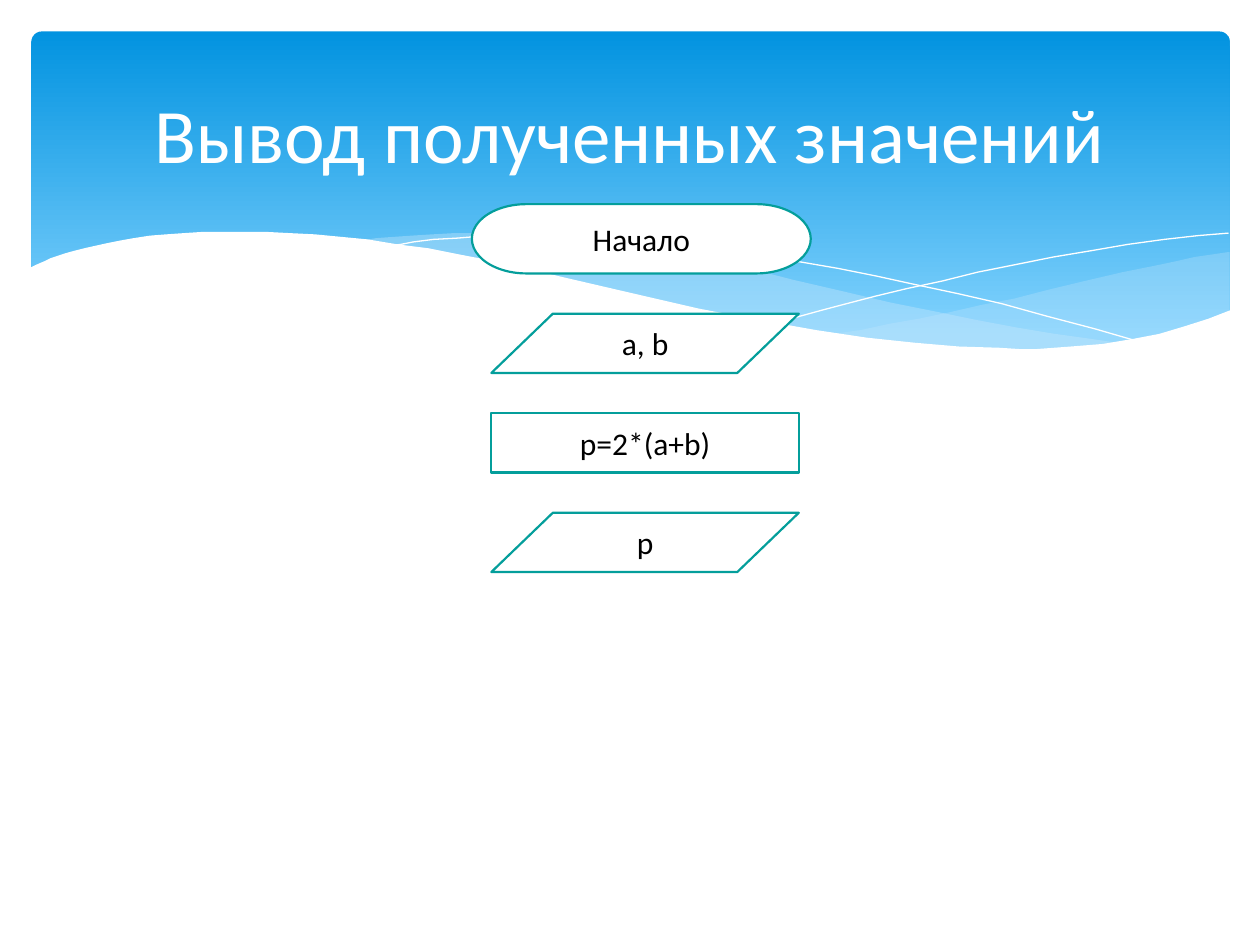
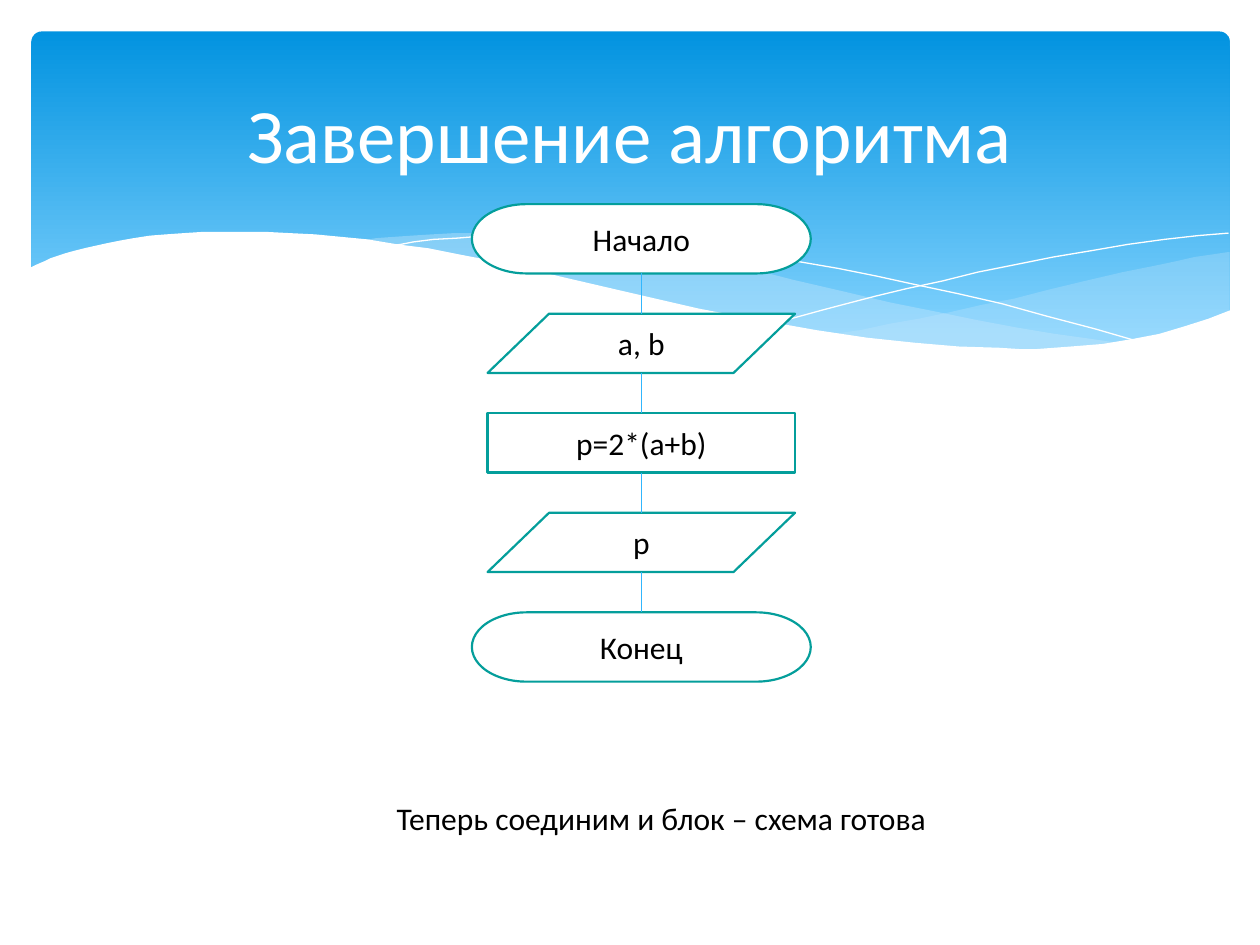
from lxml import etree
from pptx import Presentation
from pptx.dml.color import RGBColor
from pptx.enum.shapes import MSO_CONNECTOR, MSO_SHAPE
from pptx.enum.text import MSO_ANCHOR, PP_ALIGN
from pptx.oxml.ns import qn
from pptx.util import Inches, Pt

TERMINATOR = MSO_SHAPE.FLOWCHART_TERMINATOR
DATA = MSO_SHAPE.FLOWCHART_DATA
PROCESS = MSO_SHAPE.FLOWCHART_PROCESS
ROUNDED = MSO_SHAPE.ROUNDED_RECTANGLE
STRAIGHT = MSO_CONNECTOR.STRAIGHT
CENTER, LEFT = PP_ALIGN.CENTER, PP_ALIGN.LEFT
MIDDLE, TOP = MSO_ANCHOR.MIDDLE, MSO_ANCHOR.TOP

# Content
STEPS = [(TERMINATOR, "Начало"), (DATA, "a, b"), (PROCESS, "p=2*(a+b)"), (DATA, "p")]
SLIDES = [
    {"title": "Вывод полученных значений", "steps": STEPS,
     "step_shift": 0.03, "joined": False, "note": None},
    {"title": "Завершение алгоритма", "steps": STEPS + [(TERMINATOR, "Конец")],
     "step_shift": 0, "joined": True, "note": "Теперь соединим и блок – схема готова"},
]

# Shared style
FONT = "Calibri"
WHITE, BLACK = "FFFFFF", "000000"
SKY_TOP, SKY_BOTTOM, MIST = "0293E0", "83D3FE", "C6E7FC"
OUTLINE, LINK = "049E9B", "31B6FD"

# Flowchart column, in inches
AXIS, FIRST_TOP, GAP = 5.09, 1.62, 0.32
SIZES = {TERMINATOR: (2.69, 0.55), DATA: (2.44, 0.47), PROCESS: (2.44, 0.47)}

# Waves in hundredths of an inch: points, fill, opacity in percent (no fill: a hairline)
RIGHT_MIST = [
    (975, 200), (962, 202), (948, 204), (935, 207), (921, 210), (906, 213), (891, 216),
    (861, 223), (832, 230), (805, 237), (779, 242), (753, 248), (729, 253), (706, 257),
    (683, 262), (661, 265), (691, 269), (719, 272), (745, 275), (769, 277), (792, 277),
    (814, 278), (835, 277), (854, 276), (872, 274), (889, 272), (905, 269), (921, 265),
    (935, 262), (949, 257), (963, 252), (976, 247), (976, 200)]
MIDDLE_MIST = [
    (893, 273), (866, 269), (837, 265), (807, 260), (775, 254), (741, 247), (706, 240),
    (668, 231), (629, 222), (598, 214), (569, 208), (541, 203), (514, 198), (489, 194),
    (465, 191), (442, 189), (420, 187), (399, 186), (380, 185), (361, 185), (344, 186),
    (328, 187), (313, 188), (299, 189), (286, 191), (323, 196), (362, 203), (404, 211),
    (449, 222), (491, 232), (530, 240), (566, 248), (601, 255), (634, 261), (665, 266),
    (695, 270), (722, 274), (748, 276), (773, 277), (796, 278), (818, 278), (838, 278),
    (857, 277), (876, 275), (893, 273)]
FALLING_LINE = [
    (309, 195), (318, 194), (328, 192), (344, 190), (363, 189), (387, 187), (416, 187),
    (450, 188), (489, 190), (533, 194), (582, 200), (608, 204), (636, 208), (665, 213),
    (695, 219), (727, 226), (760, 233), (795, 241), (831, 251), (869, 261), (907, 272)]
RISING_LINE = [
    (613, 257), (624, 254), (653, 246), (672, 241), (695, 235), (720, 229), (748, 223),
    (776, 216), (806, 210), (836, 204), (866, 199), (895, 194), (924, 190), (951, 187),
    (975, 185)]
WHITE_WAVE = [
    (977, 246), (959, 253), (940, 259), (920, 265), (899, 269), (875, 273), (850, 275),
    (823, 277), (809, 277), (793, 276), (761, 275), (726, 272), (688, 268), (648, 262),
    (603, 254), (555, 245), (503, 233), (447, 220), (418, 213), (391, 207), (365, 202),
    (340, 197), (316, 194), (292, 190), (271, 188), (250, 186), (230, 185), (211, 184),
    (193, 184), (177, 184), (161, 184), (146, 185), (132, 186), (119, 187), (106, 189),
    (95, 191), (85, 193), (76, 195), (67, 197), (59, 199), (52, 201), (46, 203),
    (40, 205), (36, 207), (29, 210), (23, 213), (23, 329), (977, 329)]
WAVES = [(RIGHT_MIST, MIST, 29), (MIDDLE_MIST, MIST, 40), (FALLING_LINE, None, None),
         (RISING_LINE, None, None), (WHITE_WAVE, WHITE, 100)]


def rgb(code):
    return RGBColor.from_string(code)


def paint(shape, fill=None, line=None, width=0.0):
    """Set fill and line; None leaves either one empty."""
    shape.shadow.inherit = False
    if fill:
        shape.fill.solid()
        shape.fill.fore_color.rgb = rgb(fill)
    else:
        shape.fill.background()
    if line:
        shape.line.color.rgb = rgb(line)
        shape.line.width = Pt(width)
    else:
        shape.line.fill.background()


def write(shape, text, size, color, align=CENTER, anchor=MIDDLE, wrap=True):
    frame = shape.text_frame
    frame.word_wrap = wrap
    frame.vertical_anchor = anchor
    paragraph = frame.paragraphs[0]
    paragraph.text = text
    paragraph.alignment = align
    paragraph.font.name = FONT
    paragraph.font.size = Pt(size)
    paragraph.font.color.rgb = rgb(color)


def add_text(slide, box, *style, **layout):
    write(slide.shapes.add_textbox(*map(Inches, box)), *style, **layout)


def add_wave(slide, points, fill, opacity):
    builder = slide.shapes.build_freeform(*points[0], scale=Inches(0.01))
    builder.add_line_segments(points[1:], close=fill is not None)
    wave = builder.convert_to_shape()
    paint(wave, fill, line=None if fill else WHITE)
    if fill and opacity < 100:
        color = wave.fill._xPr.find(qn("a:solidFill"))[0]
        etree.SubElement(color, qn("a:alpha"), val=str(opacity * 1000))


def add_backdrop(slide):
    sky = slide.shapes.add_shape(ROUNDED, *map(Inches, (0.25, 0.25, 9.51, 2.7)))
    sky.adjustments[0] = 0.03
    paint(sky)
    sky.fill.gradient()
    sky.fill.gradient_angle = 270
    for stop, color, position in zip(sky.fill.gradient_stops, (SKY_TOP, SKY_BOTTOM), (0, 0.9)):
        stop.color.rgb = rgb(color)
        stop.position = position
    for wave in WAVES:
        add_wave(slide, *wave)


def add_steps(slide, steps, shift):
    """Stack the flowchart blocks on the axis; return (kind, shape) pairs."""
    blocks, top = [], FIRST_TOP
    for kind, text in steps:
        width, height = SIZES[kind]
        center = AXIS if kind == TERMINATOR else AXIS + shift
        block = slide.shapes.add_shape(
            kind, *map(Inches, (center - width / 2, top, width, height)))
        paint(block, WHITE, OUTLINE, 1.25)
        write(block, text, 18, BLACK)
        blocks.append((kind, block))
        top += height + GAP
    return blocks


def join(slide, upper, lower):
    """Link two blocks; the slanted data blocks have no site 0 or 2 at mid-side."""
    (upper_kind, start), (lower_kind, end) = upper, lower
    link = slide.shapes.add_connector(
        STRAIGHT, Inches(AXIS), start.top + start.height, Inches(AXIS), end.top)
    if upper_kind != DATA:
        link.begin_connect(start, 2)
    if lower_kind != DATA:
        link.end_connect(end, 0)
    link.line.color.rgb = rgb(LINK)
    link.line.width = Pt(0.75)
    etree.SubElement(link._element.spPr, qn("a:effectLst"))


def main():
    presentation = Presentation()
    presentation.slide_width, presentation.slide_height = Inches(10), Inches(7.5)
    for content in SLIDES:
        slide = presentation.slides.add_slide(presentation.slide_layouts[6])
        add_backdrop(slide)
        add_text(slide, (0.5, 0.37, 9, 1.37), content["title"], 44, WHITE)
        blocks = add_steps(slide, content["steps"], content["step_shift"])
        if content["note"]:
            add_text(slide, (3.05, 6.29, 4.45, 0.4), content["note"], 18, BLACK,
                     align=LEFT, anchor=TOP, wrap=False)
        if content["joined"]:
            for upper, lower in zip(blocks, blocks[1:]):
                join(slide, upper, lower)
    presentation.save("out.pptx")


if __name__ == "__main__":
    main()
